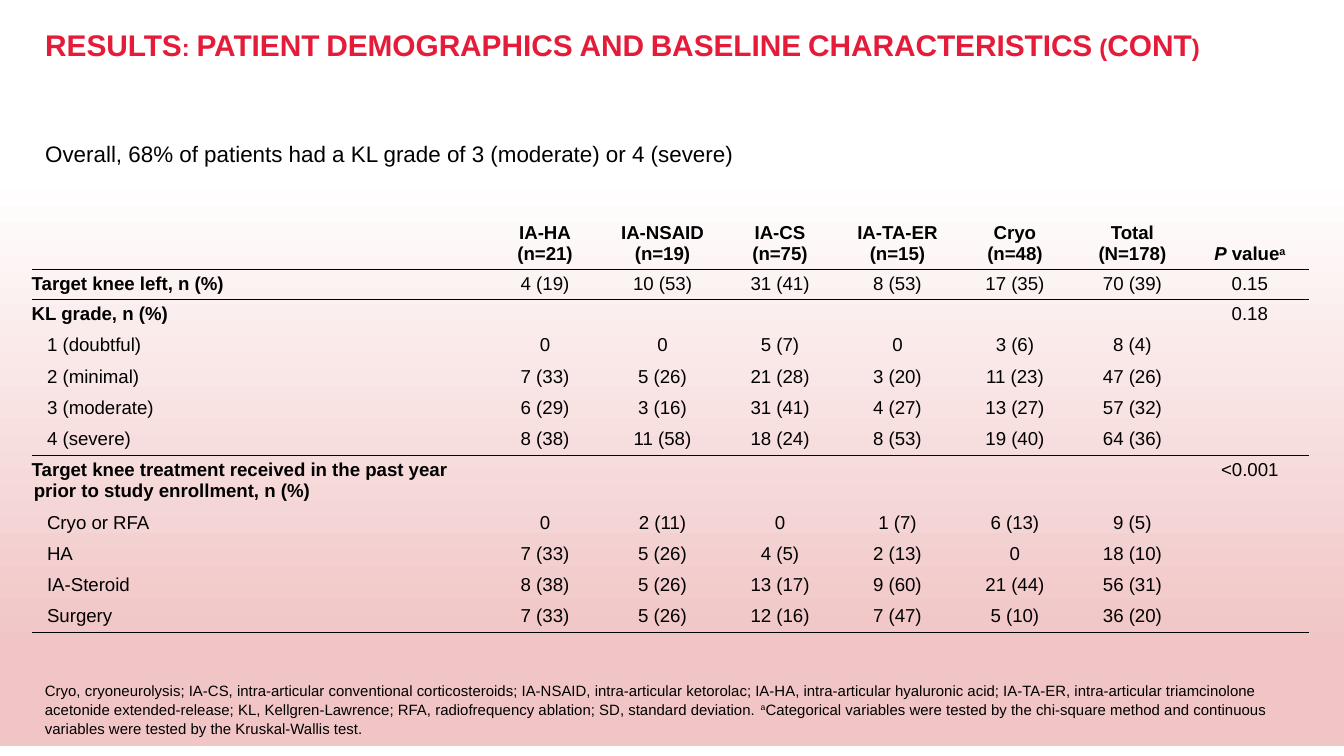
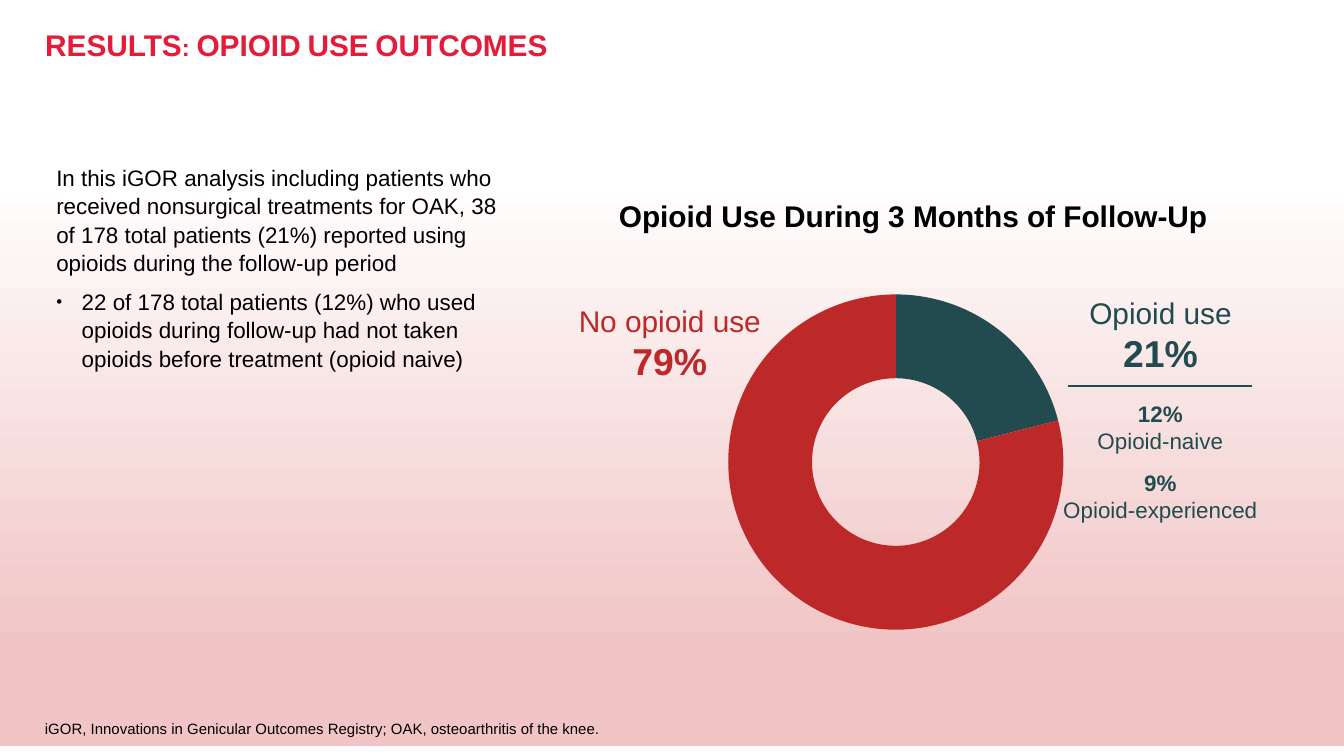
from lxml import etree
from pptx import Presentation
from pptx import util as u
from pptx.chart.data import CategoryChartData
from pptx.dml.color import RGBColor
from pptx.enum import chart as ch, shapes, text
from pptx.oxml.ns import qn

Cm, Pt = u.Cm, u.Pt
FONT = "Arial"
COLORS = {"title": "E41C39", "text": "000000", "white": "FFFFFF",
          "pink": "F1C5C5", "teal": "224B50", "red": "BD2929"}
LEFT, CENTER = text.PP_ALIGN.LEFT, text.PP_ALIGN.CENTER

# ---- Content: a run is (text, style), style holding b, i or ^ (superscript)
DEMOGRAPHICS = {
    "title": "RESULTS: PATIENT DEMOGRAPHICS AND BASELINE CHARACTERISTICS (CONT)",
    "lead": "Overall, 68% of patients had a KL grade of 3 (moderate) or 4 (severe)",
    "groups": [("IA-HA", "(n=21)"), ("IA-NSAID", "(n=19)"), ("IA-CS", "(n=75)"),
               ("IA-TA-ER", "(n=15)"), ("Cryo", "(n=48)"), ("Total", "(N=178)"),
               ([("P", "i"), (" value", ""), ("a", "^")],)],
    # (label, values of the six groups, P value)
    "rows": [
        ("Target knee left, n (%)",
         ["4 (19)", "10 (53)", "31 (41)", "8 (53)", "17 (35)", "70 (39)"], "0.15"),
        ("KL grade, n (%)", [""] * 6, "0.18"),
        ("1 (doubtful)", ["0", "0", "5 (7)", "0", "3 (6)", "8 (4)"], ""),
        ("2 (minimal)",
         ["7 (33)", "5 (26)", "21 (28)", "3 (20)", "11 (23)", "47 (26)"], ""),
        ("3 (moderate)",
         ["6 (29)", "3 (16)", "31 (41)", "4 (27)", "13 (27)", "57 (32)"], ""),
        ("4 (severe)",
         ["8 (38)", "11 (58)", "18 (24)", "8 (53)", "19 (40)", "64 (36)"], ""),
        ("Target knee treatment received in the past year prior to study "
         "enrollment, n (%)", [""] * 6, "<0.001"),
        ("Cryo or RFA", ["0", "2 (11)", "0", "1 (7)", "6 (13)", "9 (5)"], ""),
        ("HA", ["7 (33)", "5 (26)", "4 (5)", "2 (13)", "0", "18 (10)"], ""),
        ("IA-Steroid",
         ["8 (38)", "5 (26)", "13 (17)", "9 (60)", "21 (44)", "56 (31)"], ""),
        ("Surgery",
         ["7 (33)", "5 (26)", "12 (16)", "7 (47)", "5 (10)", "36 (20)"], ""),
    ],
    "rules": {0: 0.5, 1: 0.25, 6: 0.25, 11: 0.5},  # row: width of line below
    "note": [
        ("Cryo, cryoneurolysis; IA-CS, intra-articular conventional corticosteroids; "
         "IA-NSAID, intra-articular ketorolac; IA-HA, intra-articular hyaluronic acid; "
         "IA-TA-ER, intra-articular triamcinolone acetonide extended-release; "
         "KL, Kellgren-Lawrence; RFA, radiofrequency ablation; "
         "SD, standard deviation. ", ""),
        ("a", "^"),
        ("Categorical variables were tested by the chi-square method and continuous "
         "variables were tested by the Kruskal-Wallis test.", "")],
}
OPIOIDS = {
    "title": "RESULTS: OPIOID USE OUTCOMES",
    "lead": "In this iGOR analysis including patients who received nonsurgical "
            "treatments for OAK, 38 of 178 total patients (21%) reported using "
            "opioids during the follow-up period",
    "bullet": "22 of 178 total patients (12%) who used opioids during follow-up "
              "had not taken opioids before treatment (opioid naive)",
    "chart_title": "Opioid Use During 3 Months of Follow-Up",
    "shares": [("1", 21, "teal"), ("2", 79, "red")],
    # (label, share, colour, box)
    "callouts": [("No opioid use", "79%", "red", (10.64, 5.59, 4.04, 1.8)),
                 ("Opioid use", "21%", "teal", (19.89, 5.44, 4.09, 1.8))],
    "split": [("12%", "Opioid-naive"), ("9%", "Opioid-experienced")],
    "note": "iGOR, Innovations in Genicular Outcomes Registry; "
            "OAK, osteoarthritis of the knee.",
}


# ---- Helpers
def rgb(name):
    return RGBColor.from_string(COLORS[name])


def box(*lengths):
    return [Cm(x) for x in lengths]


def write(p, runs, size, color="text", bold=False, align=LEFT, after=0, spacing=1):
    p.alignment, p.line_spacing = align, spacing
    p.space_before, p.space_after = Pt(0), Pt(after)
    f = p.font
    f.name, f.size, f.bold, f.color.rgb = FONT, Pt(size), bold, rgb(color)
    for words, style in [(runs, "")] if isinstance(runs, str) else runs:
        r = p.add_run()
        r.text = words
        if "i" in style:
            r.font.italic = True
        if "^" in style:
            r._r.get_or_add_rPr().set("baseline", "30000")


def indent(p, margin, first, bullet=None):
    pPr = p._p.get_or_add_pPr()
    pPr.set("marL", str(Cm(margin)))
    pPr.set("indent", str(Cm(first)))
    if bullet:
        marks = [("a:buSzPct", "val", "75000"), ("a:buFont", "typeface", FONT),
                 ("a:buChar", "char", bullet)]
    else:
        marks = [("a:buNone", None, None)]
    at = 0
    while at < len(pPr) and pPr[at].tag in [qn(f"a:{t}") for t in ("lnSpc", "spcBef", "spcAft")]:
        at += 1
    for i, (tag, key, value) in enumerate(marks):
        pPr.insert(at + i, etree.Element(qn(tag), {key: value} if key else {}))


def place(sp, where, anchor=text.MSO_ANCHOR.TOP):
    sp.left, sp.top, sp.width, sp.height = box(*where)
    tf = sp.text_frame
    tf.word_wrap, tf.auto_size = True, text.MSO_AUTO_SIZE.NONE
    tf.vertical_anchor = anchor
    return tf


def add_text(s, where, paras, anchor=text.MSO_ANCHOR.TOP):
    tf = place(s.shapes.add_textbox(0, 0, 0, 0), where, anchor)
    for i, para in enumerate(paras):
        write(tf.paragraphs[0] if i == 0 else tf.add_paragraph(), **para)


def new_slide(prs, content, lead_box, note_top, note_height):
    """Title, lead text and footnote; gives the slide and its body text."""
    s = prs.slides.add_slide(prs.slide_layouts[1])
    tf = place(s.shapes.title, (0.6, 0.38, 23.8, 0.9), text.MSO_ANCHOR.MIDDLE)
    p = tf.paragraphs[0]
    write(p, content["title"], 16, "title", bold=True, spacing=1.05)
    p.runs[0]._r.get_or_add_rPr().set("cap", "small")
    body = place(s.placeholders[1], lead_box)
    write(body.paragraphs[0], content["lead"], 12, after=6, spacing=1.05)
    indent(body.paragraphs[0], 0, 0)
    add_text(s, (0.6, note_top, 24.15, note_height),
             [dict(runs=content["note"], size=8, spacing=1.05)],
             text.MSO_ANCHOR.BOTTOM)
    return s, body


def add_band(prs, s):
    """Shade every slide by putting one gradient band on the master."""
    sp = s.shapes.add_shape(shapes.MSO_SHAPE.RECTANGLE, *box(0, 1.65, 25.4, 12.45))
    sp.shadow.inherit = False
    sp.line.fill.background()
    sp.fill.gradient()
    sp.fill.gradient_angle = 270
    for stop, at, color in zip(sp.fill.gradient_stops, (0.13, 0.85), ("white", "pink")):
        stop.position, stop.color.rgb = at, rgb(color)
    prs.slide_master.shapes.element.insert(2, sp.element)


# ---- Demographics table
def format_cell(cell, paras, rule, anchor, **look):
    cell.margin_left = cell.margin_right = 0
    cell.margin_top = cell.margin_bottom = Cm(0.08)
    cell.vertical_anchor = anchor
    cell.fill.background()
    tf = cell.text_frame
    for i, runs in enumerate(paras):
        p = tf.paragraphs[0] if i == 0 else tf.add_paragraph()
        if runs:
            write(p, runs, 10, **look)
        else:
            etree.SubElement(p._p, qn("a:endParaRPr"), sz="1000")
    if rule:
        ln = etree.Element(qn("a:lnB"), w=str(Pt(rule)))
        fill = etree.SubElement(ln, qn("a:solidFill"))
        etree.SubElement(fill, qn("a:srgbClr"), val=COLORS["text"])
        cell._tc.get_or_add_tcPr().insert(0, ln)


def add_demographics(s, content):
    rows, rules = content["rows"], content["rules"]
    frame = s.shapes.add_table(len(rows) + 1, 8, *box(0.6, 4.09, 24.13, 7.76))
    frame.element.find(".//" + qn("a:tableStyleId")).text = \
        "{2D5ABB26-0587-4C30-8999-92F81FD0307C}"  # no style, no grid
    t = frame.table
    t.first_row = t.horz_banding = False
    for c, col in enumerate(t.columns):
        col.width = Cm(2.22 if c else 8.59)
    for r, row in enumerate(t.rows):
        row.height = Cm(0.99 if r in (0, 7) else 0.58)
    for c, paras in enumerate([("",)] + content["groups"]):
        format_cell(t.cell(0, c), paras, rules[0], text.MSO_ANCHOR.BOTTOM,
                    bold=True, align=CENTER)
    for r, (label, values, p_value) in enumerate(rows, 1):
        heading = label.endswith("n (%)")
        for c, value in enumerate([label] + values + [p_value]):
            format_cell(t.cell(r, c), [value], rules.get(r), text.MSO_ANCHOR.TOP,
                        bold=heading and c == 0, align=CENTER if c else LEFT)
        p = t.cell(r, 0).text_frame.paragraphs[0]
        if not heading:
            indent(p, 0.29, 0)
        elif r == 7:
            indent(p, 0.04, -0.04)


# ---- Opioid doughnut
def add_doughnut(s, shares):
    data = CategoryChartData()
    data.categories = [name for name, _, _ in shares]
    data.add_series("Series 1", [value for _, value, _ in shares])
    chart = s.shapes.add_chart(ch.XL_CHART_TYPE.DOUGHNUT,
                               *box(12.65, 5.21, 8.56, 7.04), data).chart
    chart.has_legend = chart.has_title = False
    chart.font.name, chart.font.size = FONT, Pt(10)
    chart.font.color.rgb = rgb("white")
    plot = chart.plots[0]
    plot.vary_by_categories = True
    for i, (_, _, color) in enumerate(shares):
        fmt = plot.series[0].points[i].format
        fmt.fill.solid()
        fmt.fill.fore_color.rgb = rgb(color)
        fmt.line.fill.background()
    # Fix the ring's place inside the chart frame
    area = chart.element.find(".//" + qn("c:plotArea"))
    for old in area.findall(qn("c:layout")):
        area.remove(old)
    layout = etree.Element(qn("c:layout"))
    manual = etree.SubElement(layout, qn("c:manualLayout"))
    for tag, value in [("layoutTarget", "inner"), ("xMode", "edge"), ("yMode", "edge"),
                       ("x", "0.13"), ("y", "0.05"), ("w", "0.74"), ("h", "0.9")]:
        etree.SubElement(manual, qn(f"c:{tag}"), val=value)
    area.insert(0, layout)


def add_opioid_use(s, content):
    add_text(s, (11.13, 3.61, 12.27, 0.94),
             [dict(runs=content["chart_title"], size=16, bold=True, align=CENTER)])
    add_doughnut(s, content["shares"])
    for label, share, color, where in content["callouts"]:
        add_text(s, where, [dict(runs=label, size=16, color=color, align=CENTER),
                            dict(runs=share, size=20, color=color, bold=True, align=CENTER)])
    look = dict(size=12, color="teal", align=CENTER)
    split = []
    for share, label in content["split"]:
        split += [dict(runs=share, bold=True, **look), dict(runs=label, after=8, **look)]
    add_text(s, (19.76, 7.44, 4.34, 2.69), split)
    line = s.shapes.add_connector(shapes.MSO_CONNECTOR.STRAIGHT,
                                  *box(20.19, 7.29, 23.67, 7.29))
    line.line.color.rgb, line.line.width = rgb("teal"), Pt(0.75)
    etree.SubElement(line.element.spPr, qn("a:effectLst"))


def main():
    prs = Presentation()
    prs.slide_width, prs.slide_height = box(25.4, 14.28)

    s, _ = new_slide(prs, DEMOGRAPHICS, (0.6, 2.49, 23.47, 0.76), 12.78, 1.27)
    add_band(prs, s)
    add_demographics(s, DEMOGRAPHICS)

    s, body = new_slide(prs, OPIOIDS, (0.81, 2.95, 8.84, 4.06), 13.46, 0.6)
    p = body.add_paragraph()
    write(p, OPIOIDS["bullet"], 12, after=4, spacing=1.05)
    indent(p, 0.48, -0.48, "•")
    add_opioid_use(s, OPIOIDS)

    prs.save("out.pptx")


if __name__ == "__main__":
    main()
